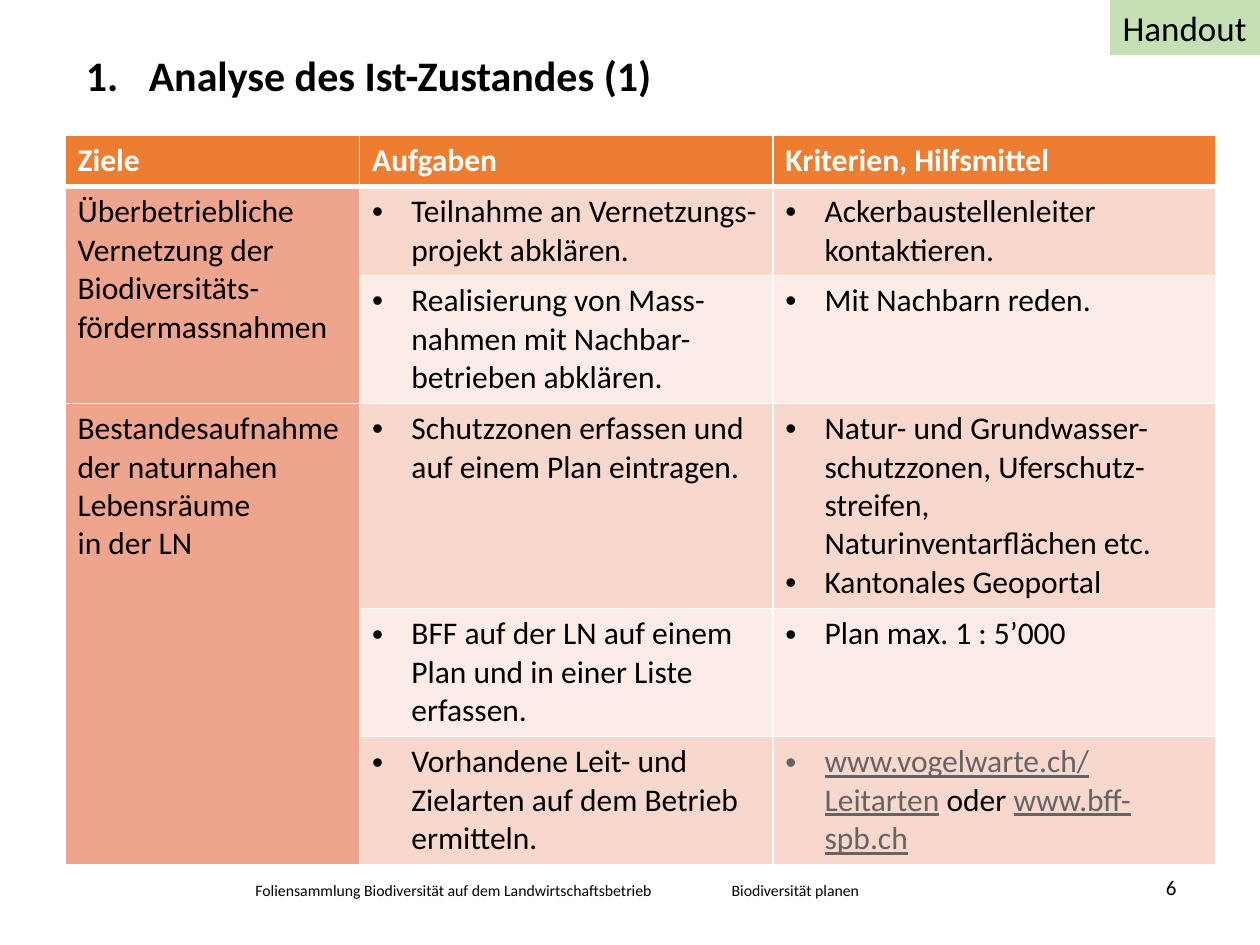
import pptx
import pptx.dml.color
import pptx.enum.shapes
import pptx.enum.text
import pptx.oxml
import pptx.oxml.ns
import pptx.util

Cm = pptx.util.Cm
Pt = pptx.util.Pt
ALIGN = pptx.enum.text.PP_ALIGN
ANCHOR = pptx.enum.text.MSO_ANCHOR
HUES = {"text": "000000", "white": "FFFFFF", "head": "ED7D31", "goal": "EFA48D",
        "dark": "F8D7CD", "light": "FCECE8", "link": "646464", "tag": "C5E0B4"}
HEADS = ["Ziele", "Aufgaben", "Kriterien, Hilfsmittel"]
GOALS = [
    (1, 2, "Überbetriebliche Vernetzung der Biodiversitäts-fördermassnahmen"),
    (3, 5, "Bestandesaufnahme der naturnahen Lebensräume \vin der LN"),
]
TASKS = [
    ("Teilnahme an Vernetzungs-projekt abklären.",
     ["Ackerbaustellenleiter kontaktieren."]),
    ("Realisierung von Mass-nahmen mit Nachbar-betrieben abklären.",
     ["Mit Nachbarn reden."]),
    ("Schutzzonen erfassen und auf einem Plan eintragen.",
     ["Natur- und Grundwasser-schutzzonen, Uferschutz-streifen, "
      "Naturinventarflächen etc.", "Kantonales Geoportal"]),
    ("BFF auf der LN auf einem Plan und in einer Liste erfassen.",
     ["Plan max. 1 : 5’000"]),
    ("Vorhandene Leit- und Zielarten auf dem Betrieb ermitteln.",
     [["www.vogelwarte.ch/Leitarten", " oder ", "www.bff-spb.ch"]]),
]
COLS = [5.94, 8.33, 8.92]
ROWS = [1.03, 1.79, 2.58, 4.14, 2.58, 2.58]


def color(name):
    """Return the named colour."""
    return pptx.dml.color.RGBColor.from_string(HUES[name])


def paint(shape, name):
    """Fill a shape or cell with a named colour."""
    shape.fill.solid()
    shape.fill.fore_color.rgb = color(name)


def add_run(para, text, size, hue="text", bold=False, line=False):
    """Append a formatted run, with line breaks at vertical tabs."""
    for i, part in enumerate(text.split("\v")):
        if i:
            para.add_line_break()
        run = para.add_run()
        run.text = part
        font = run.font
        font.name = "Calibri"
        font.size = Pt(size)
        font.bold = bold
        font.underline = line
        font.color.rgb = color(hue)


def indent(para, width, mark):
    """Give a paragraph a hanging indent and a bullet or number."""
    props = para._p.get_or_add_pPr()
    props.set("marL", str(Cm(width)))
    props.set("indent", str(-Cm(width)))
    space = pptx.oxml.ns.nsdecls("a")
    if mark == "1.":
        tags = [f'<a:buFont {space} typeface="+mj-lt"/>',
                f'<a:buAutoNum {space} type="arabicPeriod"/>']
    else:
        tags = [f'<a:buFont {space} typeface="Arial"/>',
                f'<a:buChar {space} char="{mark}"/>']
    for tag in tags:
        props.append(pptx.oxml.parse_xml(tag))


def add_title(slide, text):
    """Place the numbered title in its placeholder."""
    title = slide.shapes.title
    title.left, title.top, title.width, title.height = Cm(1.73), Cm(1.12), Cm(22), Cm(1.4)
    frame = title.text_frame
    frame.margin_left = frame.margin_right = frame.margin_top = frame.margin_bottom = 0
    frame.vertical_anchor = ANCHOR.TOP
    frame.auto_size = pptx.enum.text.MSO_AUTO_SIZE.NONE
    para = frame.paragraphs[0]
    para.alignment = ALIGN.LEFT
    para.line_spacing = 0.9
    indent(para, 1.27, "1.")
    add_run(para, text, 24, bold=True)


def add_label(slide, text, box, size, align=ALIGN.LEFT, anchor=ANCHOR.TOP, side=0.25):
    """Add a line of footer text."""
    frame = slide.shapes.add_textbox(*map(Cm, box)).text_frame
    frame.word_wrap = True
    frame.vertical_anchor = anchor
    frame.margin_left = frame.margin_right = Cm(side)
    frame.paragraphs[0].alignment = align
    add_run(frame.paragraphs[0], text, size)


def add_tag(slide, text):
    """Add the coloured corner tag."""
    shape = slide.shapes.add_shape(
        pptx.enum.shapes.MSO_SHAPE.RECTANGLE, Cm(22.38), 0, Cm(3.04), Cm(1.11))
    shape.shadow.inherit = False
    paint(shape, "tag")
    shape.line.fill.background()
    frame = shape.text_frame
    frame.word_wrap = False
    frame.paragraphs[0].alignment = ALIGN.LEFT
    add_run(frame.paragraphs[0], text, 20)


def edge(cell, row):
    """Draw white cell borders, heavier below the header."""
    wide = {"T": 3 if row == 1 else 1, "B": 3 if row == 0 else 1}
    props = cell._tc.get_or_add_tcPr()
    for i, side in enumerate("LRTB"):
        props.insert(i, pptx.oxml.parse_xml(
            f'<a:ln{side} {pptx.oxml.ns.nsdecls("a")} w="{Pt(wide.get(side, 1))}">'
            f'<a:solidFill><a:srgbClr val="{HUES["white"]}"/></a:solidFill></a:ln{side}>'))


def add_list(cell, items):
    """Write bulleted items; a list item alternates links and plain text."""
    frame = cell.text_frame
    for i, item in enumerate(items):
        para = frame.add_paragraph() if i else frame.paragraphs[0]
        indent(para, 0.79, "•")
        if isinstance(item, str):
            add_run(para, item, 18)
            continue
        for j, part in enumerate(item):
            link = j % 2 == 0
            add_run(para, part, 18, "link" if link else "text", line=link)


def add_grid(slide):
    """Build the table of goals, tasks and criteria."""
    grid = slide.shapes.add_table(
        len(ROWS), len(COLS), Cm(1.31), Cm(2.73), Cm(sum(COLS)), Cm(sum(ROWS))).table
    for col, width in zip(grid.columns, COLS):
        col.width = Cm(width)
    for row, height in zip(grid.rows, ROWS):
        row.height = Cm(height)
    for r in range(len(ROWS)):
        band = "dark" if r % 2 else "light"
        for c in range(len(COLS)):
            cell = grid.cell(r, c)
            paint(cell, "head" if r == 0 else "goal" if c == 0 else band)
            edge(cell, r)
    for c, text in enumerate(HEADS):
        add_run(grid.cell(0, c).text_frame.paragraphs[0], text, 18, "white", True)
    for first, last, text in GOALS:
        cell = grid.cell(first, 0)
        cell.merge(grid.cell(last, 0))
        add_run(cell.text_frame.paragraphs[0], text, 18)
    for r, (task, tools) in enumerate(TASKS, 1):
        add_list(grid.cell(r, 1), [task])
        add_list(grid.cell(r, 2), tools)


def main():
    """Build and save the slide."""
    deck = pptx.Presentation()
    deck.slide_width, deck.slide_height = Cm(25.4), Cm(19.05)
    slide = deck.slides.add_slide(deck.slide_layouts[5])
    add_label(slide, "Foliensammlung Biodiversität auf dem Landwirtschaftsbetrieb",
              (4.9, 17.63, 8.79, 0.64), 9)
    add_label(slide, "Biodiversität planen", (14.5, 17.63, 5.79, 0.64), 9)
    add_title(slide, "Analyse des Ist-Zustandes (1)")
    add_label(slide, "6", (21.51, 17.27, 2.21, 0.99), 12, ALIGN.RIGHT, ANCHOR.BOTTOM, 0)
    add_grid(slide)
    add_tag(slide, "Handout")
    deck.save("out.pptx")


if __name__ == "__main__":
    main()
